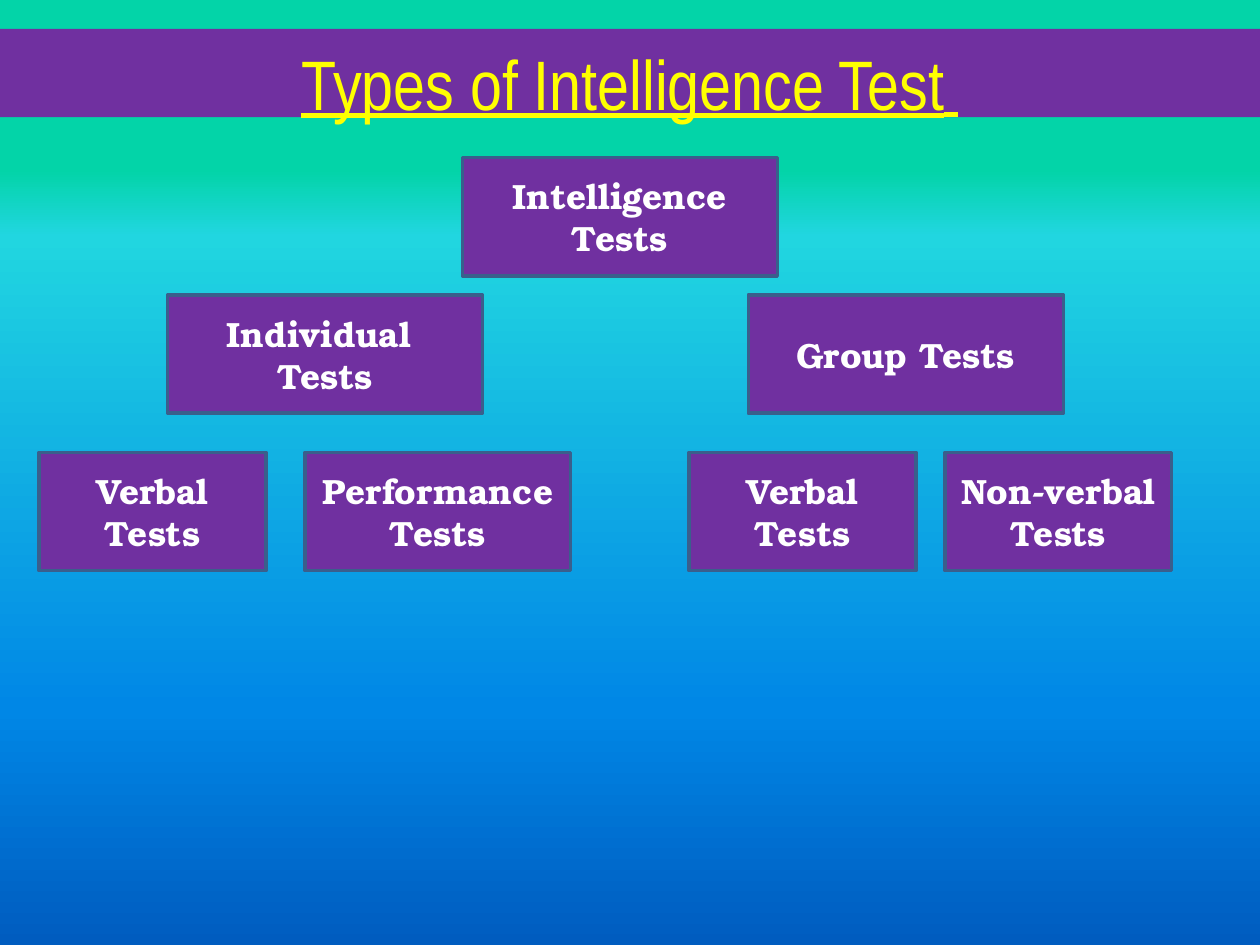
from lxml import etree
from pptx import Presentation
from pptx.dml.color import RGBColor
from pptx.enum.shapes import MSO_SHAPE as Shape
from pptx.enum.text import MSO_ANCHOR as Anchor, PP_ALIGN as Align
from pptx.oxml.ns import qn
from pptx.util import Inches, Pt

PURPLE, OUTLINE = "7030A0", "3A5F8C"
YELLOW, WHITE = "FFFF00", "FFFFFF"
SKY = [(18, "03D4A8"), (25, "21D6E0"), (75, "0087E6"), (100, "005CBF")]
BOX_HEIGHT = 0.94
LEVELS = [
    (1.25, [(3.67, 2.5, "Intelligence Tests")]),
    (2.34, [(1.33, 2.5, "Individual  Tests"), (5.94, 2.5, "Group Tests")]),
    (3.59, [(0.31, 1.8, "Verbal Tests"), (2.42, 2.11, "Performance Tests"),
            (5.47, 1.8, "Verbal Tests"), (7.5, 1.8, "Non-verbal Tests")]),
]


def rgb(value):
    return RGBColor.from_string(value)


def paint_background(slide):
    fill = slide.background.fill
    fill.gradient()
    fill.gradient_angle = 270
    stops = slide.background._cSld.find(".//" + qn("a:gsLst"))
    for stop in list(stops):
        stops.remove(stop)
    for percent, colour in SKY:
        stop = etree.SubElement(stops, qn("a:gs"), pos=str(percent * 1000))
        etree.SubElement(stop, qn("a:srgbClr"), val=colour)


def add_text(paragraph, text, size, font, colour):
    run = paragraph.add_run()
    run.text = text
    run.font.size = Pt(size)
    run.font.name = font
    run.font.color.rgb = rgb(colour)
    return run


def place_title(slide, left, top, width, height):
    title = slide.shapes.title
    title.left, title.top = Inches(left), Inches(top)
    title.width, title.height = Inches(width), Inches(height)
    title.fill.solid()
    title.fill.fore_color.rgb = rgb(PURPLE)
    frame = title.text_frame
    frame.vertical_anchor = Anchor.TOP
    frame.margin_top = Inches(0.09)
    heading = frame.paragraphs[0]
    heading.alignment = Align.CENTER
    for text, size in [("Types of Intelligence Test", 40), (" ", 36)]:
        run = add_text(heading, text, size, "Arial Narrow", YELLOW)
        run.font.underline = True


def add_test_box(slide, left, top, width, height, label):
    box = slide.shapes.add_shape(Shape.RECTANGLE, Inches(left), Inches(top),
                                 Inches(width), Inches(height))
    box.shadow.inherit = False
    box.fill.solid()
    box.fill.fore_color.rgb = rgb(PURPLE)
    box.line.color.rgb = rgb(OUTLINE)
    box.line.width = Pt(2)
    frame = box.text_frame
    frame.word_wrap = True
    frame.vertical_anchor = Anchor.MIDDLE
    caption = frame.paragraphs[0]
    caption.alignment = Align.CENTER
    add_text(caption, label, 20, "TeX Gyre Bonum", WHITE).font.bold = True


def main():
    deck = Presentation()
    deck.slide_width, deck.slide_height = Inches(10), Inches(7.5)
    slide = deck.slides.add_slide(deck.slide_layouts[5])
    paint_background(slide)
    place_title(slide, 0, 0.23, 10, 0.7)
    for top, tests in LEVELS:
        for left, width, label in tests:
            add_test_box(slide, left, top, width, BOX_HEIGHT, label)
    deck.save("out.pptx")


if __name__ == "__main__":
    main()
